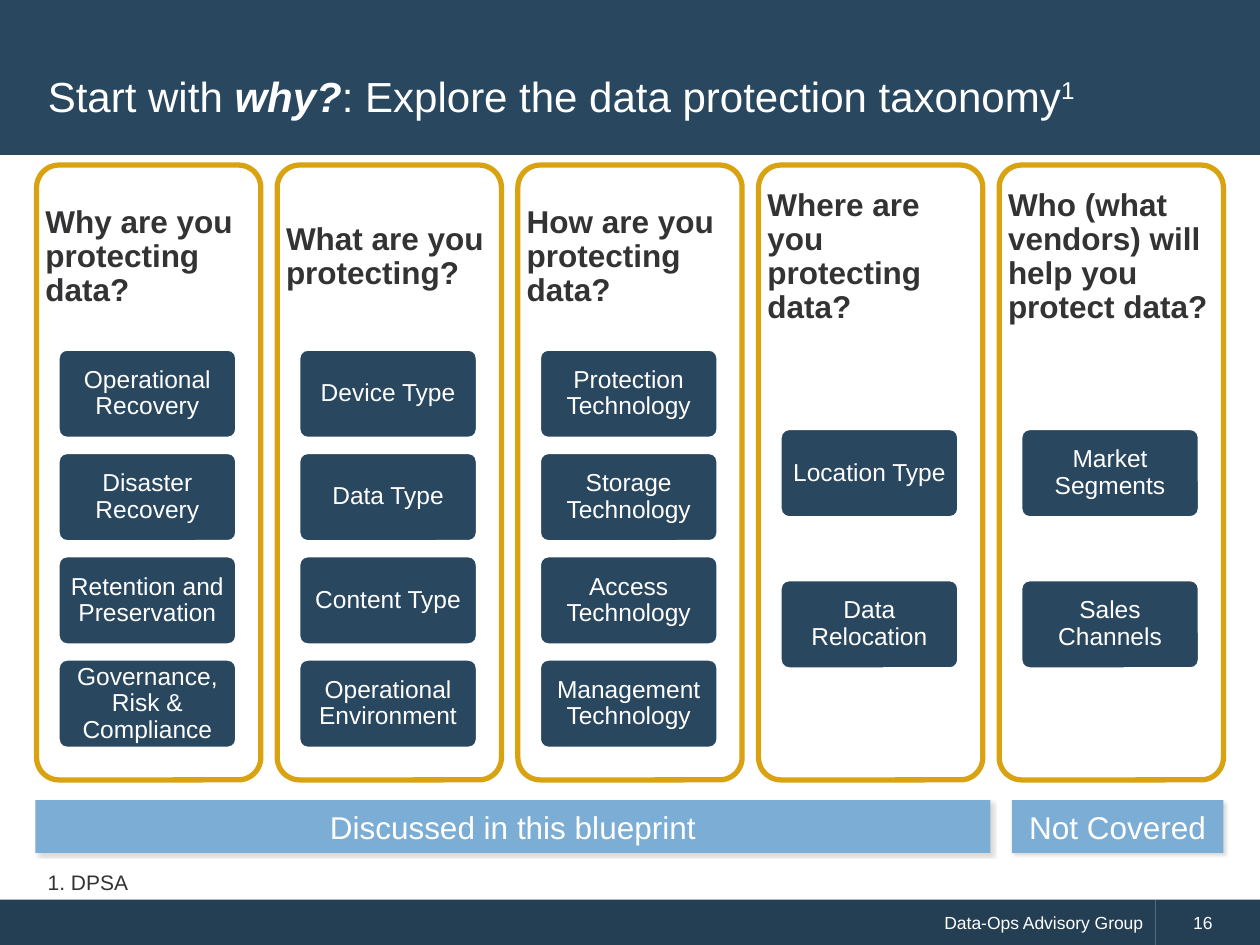
from lxml import etree
from pptx import Presentation
from pptx.dml.color import RGBColor
from pptx.enum.shapes import MSO_SHAPE
from pptx.enum.text import MSO_ANCHOR, PP_ALIGN
from pptx.oxml.ns import qn
from pptx.util import Inches, Pt

RECT, ROUNDED = MSO_SHAPE.RECTANGLE, MSO_SHAPE.ROUNDED_RECTANGLE
LEFT, CENTER, RIGHT = PP_ALIGN.LEFT, PP_ALIGN.CENTER, PP_ALIGN.RIGHT
TOP, MIDDLE = MSO_ANCHOR.TOP, MSO_ANCHOR.MIDDLE

NAVY = RGBColor(0x29, 0x47, 0x5F)
FOOTER_NAVY = RGBColor(0x24, 0x3F, 0x54)
GOLD = RGBColor(0xD9, 0xA2, 0x10)
SKY = RGBColor(0x7C, 0xAD, 0xD4)
INK = RGBColor(0x33, 0x33, 0x33)
WHITE = RGBColor(0xFF, 0xFF, 0xFF)

FONT = "Arial"
TEXT_MARGINS = (0.1, 0.05, 0.1, 0.05)

# Column and card grid, in inches
COLUMN_LEFT, COLUMN_TOP, COLUMN_PITCH = 0.29, 1.31, 1.91
COLUMN_WIDTH, COLUMN_HEIGHT, HEADING_HEIGHT = 1.78, 4.88, 1.46
CARD_INDENT, CARD_WIDTH, CARD_HEIGHT = 0.17, 1.42, 0.71
CARDS_MIDDLE = 4.355
CARD_PITCH = {4: 0.82, 2: 1.2}  # by number of cards in the column

COLUMNS = [
    ("Why are you protecting data?",
     ["Operational Recovery", "Disaster Recovery",
      "Retention and Preservation", "Governance, Risk & Compliance"]),
    ("What are you protecting?",
     ["Device Type", "Data Type", "Content Type", "Operational Environment"]),
    ("How are you protecting data?",
     ["Protection Technology", "Storage Technology",
      "Access Technology", "Management Technology"]),
    ("Where are you protecting data?", ["Location Type", "Data Relocation"]),
    ("Who (what vendors) will help you protect data?",
     ["Market Segments", "Sales Channels"]),
]


def add_run(paragraph, text, size, color, bold=False, italic=False):
    run = paragraph.add_run()
    run.text = text
    font = run.font
    font.name, font.size, font.bold, font.italic = FONT, Pt(size), bold, italic
    font.color.rgb = color


def set_frame(shape, align=LEFT, anchor=MIDDLE, margins=TEXT_MARGINS):
    """Lay out the text frame and return its first paragraph."""
    frame = shape.text_frame
    frame.word_wrap = True
    frame.vertical_anchor = anchor
    (frame.margin_left, frame.margin_top,
     frame.margin_right, frame.margin_bottom) = map(Inches, margins)
    paragraph = frame.paragraphs[0]
    paragraph.alignment = align
    return paragraph


def add_box(slide, kind, box, fill=None, line=None, line_width=0):
    shape = slide.shapes.add_shape(kind, *map(Inches, box))
    shape.shadow.inherit = False
    if fill is None:
        shape.fill.background()
    else:
        shape.fill.solid()
        shape.fill.fore_color.rgb = fill
    if line is None:
        shape.line.fill.background()
    else:
        shape.line.color.rgb = line
        shape.line.width = Pt(line_width)
    if kind == ROUNDED:
        shape.adjustments[0] = 0.1
    return shape


def add_label(slide, box, text, size, **layout):
    label = slide.shapes.add_textbox(*map(Inches, box))
    paragraph = set_frame(label, **layout)
    add_run(paragraph, text, size, INK)
    return paragraph


def add_soft_shadow(shape):
    effects = shape.element.spPr.find(qn("a:effectLst"))
    shadow = etree.SubElement(effects, qn("a:outerShdw"), blurRad=str(Pt(2)),
                              dist=str(Pt(2)), dir="2700000", rotWithShape="0")
    color = etree.SubElement(shadow, qn("a:srgbClr"), val="000000")
    etree.SubElement(color, qn("a:alpha"), val="14000")


def add_title(slide):
    title = slide.shapes.title
    title.left, title.top = Inches(0.28), Inches(0.28)
    title.width, title.height = Inches(9.43), Inches(0.96)
    paragraph = set_frame(title)
    add_run(paragraph, "Start with ", 24, WHITE)
    add_run(paragraph, "why?", 24, WHITE, bold=True, italic=True)
    add_run(paragraph, ": Explore the data protection taxonomy", 24, WHITE)
    add_run(paragraph, "1", 24, WHITE)
    footnote_mark = title.element.findall(".//" + qn("a:rPr"))[-1]
    footnote_mark.set("baseline", "30000")
    # The band goes behind the title
    band = add_box(slide, RECT, (0, 0, 10, 1.23), NAVY)
    title.element.addprevious(band.element)


def add_card(slide, left, top, text):
    card = add_box(slide, ROUNDED, (left, top, CARD_WIDTH, CARD_HEIGHT),
                   NAVY, WHITE, 2)
    paragraph = set_frame(card, CENTER, margins=(0.04, 0.03, 0.04, 0.03))
    paragraph.line_spacing = 0.9
    add_run(paragraph, text, 14, WHITE)


def add_column(slide, left, question, topics):
    add_box(slide, ROUNDED, (left, COLUMN_TOP, COLUMN_WIDTH, COLUMN_HEIGHT),
            line=GOLD, line_width=3)
    heading = add_label(slide, (left, COLUMN_TOP, COLUMN_WIDTH, HEADING_HEIGHT),
                        question, 18, margins=(0.07,) * 4)
    heading.line_spacing = 0.9
    heading.runs[0].font.bold = True
    # Cards are centred as a stack
    pitch = CARD_PITCH[len(topics)]
    stack_height = (len(topics) - 1) * pitch + CARD_HEIGHT
    first_top = CARDS_MIDDLE - stack_height / 2
    for row, topic in enumerate(topics):
        add_card(slide, left + CARD_INDENT, first_top + row * pitch, topic)


def add_coverage_bar(slide, left, width, text):
    bar = add_box(slide, RECT, (left, 6.35, width, 0.42), SKY)
    add_soft_shadow(bar)
    add_run(set_frame(bar, CENTER), text, 18, WHITE)


def add_footer_part(slide, left, width, text, align, left_margin):
    part = add_box(slide, RECT, (left, 7.14, width, 0.37), FOOTER_NAVY)
    paragraph = set_frame(part, align, margins=(left_margin, 0.05, 0.1, 0.05))
    add_run(paragraph, text, 10, WHITE)


def main():
    prs = Presentation()
    prs.slide_width, prs.slide_height = Inches(10), Inches(7.5)
    slide = prs.slides.add_slide(prs.slide_layouts[5])

    # Footer and title
    add_footer_part(slide, 0, 9.17, "Data-Ops Advisory Group", RIGHT, 0.1)
    add_footer_part(slide, 9.17, 0.83, "16", LEFT, 0.3)
    add_title(slide)

    # Taxonomy columns
    for index, (question, topics) in enumerate(COLUMNS):
        add_column(slide, COLUMN_LEFT + index * COLUMN_PITCH, question, topics)

    # Coverage bars and source note
    add_coverage_bar(slide, 0.28, 7.58, "Discussed in this blueprint")
    add_coverage_bar(slide, 8.03, 1.68, "Not Covered")
    add_label(slide, (0.28, 6.85, 1.42, 0.3), "1. DPSA", 12, anchor=TOP)

    prs.save("out.pptx")


if __name__ == "__main__":
    main()
